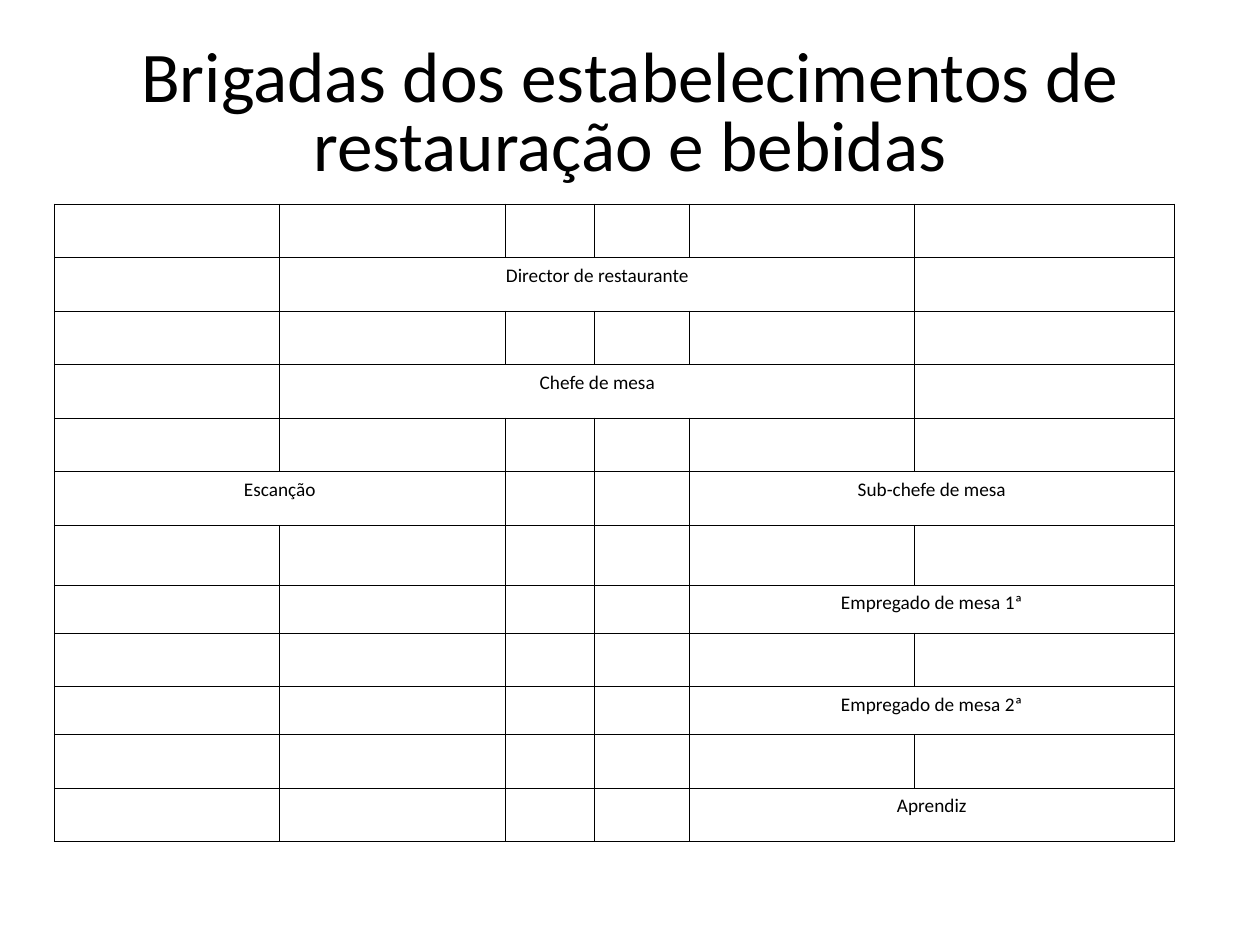
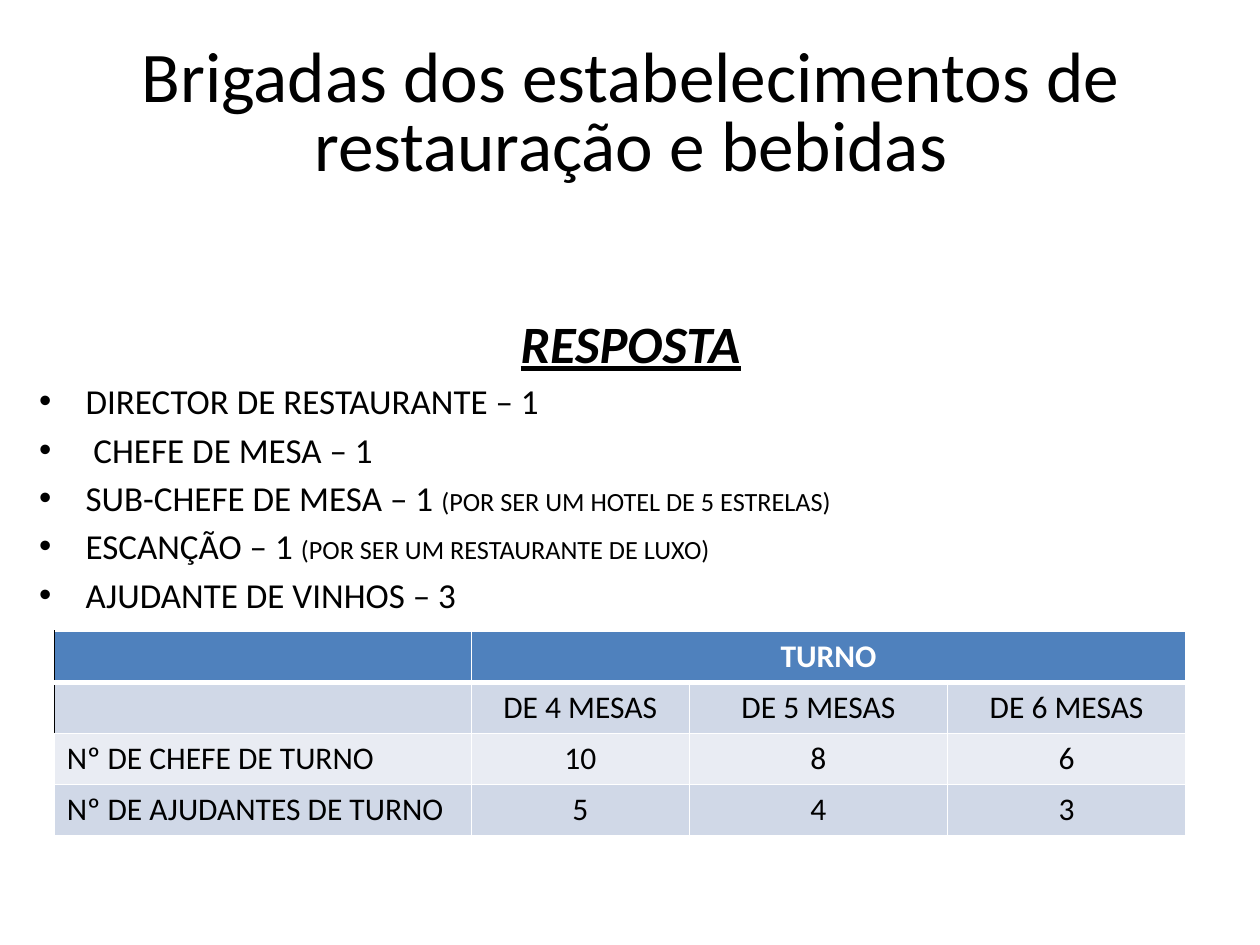
from lxml.etree import SubElement
from pptx import Presentation
from pptx.dml.color import RGBColor
from pptx.enum.text import MSO_ANCHOR, PP_ALIGN
from pptx.oxml.ns import qn
from pptx.util import Pt

BLACK = RGBColor(0x00, 0x00, 0x00)
WHITE = RGBColor(0xFF, 0xFF, 0xFF)
HEADER_BLUE = RGBColor(0x4F, 0x81, 0xBD)
DARK_BAND = RGBColor(0xD0, 0xD8, 0xE7)
LIGHT_BAND = RGBColor(0xE9, 0xEC, 0xF3)
FONT = "Calibri"
TITLE = "Brigadas dos estabelecimentos de restauração e bebidas"

BRIGADE_COLUMNS = [128.9, 128.9, 51.1, 54, 128.9, 148.3]
BRIGADE_ROWS = [30.6] * 6 + [34.2, 27.4, 30.6, 27.4, 30.6, 30.6]
# (row, first column, last column, post)
BRIGADE_POSTS = [
    (1, 1, 4, "Director de restaurante"),
    (3, 1, 4, "Chefe de mesa"),
    (5, 0, 1, "Escanção"),
    (5, 4, 5, "Sub-chefe de mesa"),
    (7, 4, 5, "Empregado de mesa 1ª"),
    (9, 4, 5, "Empregado de mesa 2ª"),
    (11, 4, 5, "Aprendiz"),
]

STAFF = [
    ("DIRECTOR DE RESTAURANTE – 1", ""),
    (" CHEFE DE MESA – 1", ""),
    ("SUB-CHEFE DE MESA – 1 ", "(POR SER UM HOTEL DE 5 ESTRELAS)"),
    ("ESCANÇÃO – 1 ", "(POR SER UM RESTAURANTE DE LUXO)"),
    ("AJUDANTE DE VINHOS – 3", ""),
]

SHIFT_COLUMNS = [238.3, 124.6, 147.6, 136.1]
SHIFT_ROWS = [29.2] * 4
SHIFTS = [
    ["", "TURNO", "", ""],
    ["", "DE 4 MESAS", "DE 5 MESAS", "DE 6 MESAS"],
    ["Nº DE CHEFE DE TURNO", "10", "8", "6"],
    ["Nº DE AJUDANTES DE TURNO", "5", "4", "3"],
]
SHIFT_FILLS = [HEADER_BLUE, DARK_BAND, LIGHT_BAND, DARK_BAND]


def add_span(para, text, size, color=BLACK, bold=False, italic=False, underline=False):
    span = para.add_run()
    span.text = text
    font = span.font
    font.name, font.size, font.color.rgb = FONT, Pt(size), color
    font.bold, font.italic, font.underline = bold, italic, underline


def add_box(page, left, top, width, height):
    box = page.shapes.add_textbox(Pt(left), Pt(top), Pt(width), Pt(height))
    box.text_frame.word_wrap = True
    return box.text_frame


def add_title(page, left, width):
    frame = add_box(page, left, 21.6, width, 90)
    frame.vertical_anchor = MSO_ANCHOR.MIDDLE
    para = frame.paragraphs[0]
    para.alignment = PP_ALIGN.CENTER
    para.line_spacing = 0.8
    add_span(para, TITLE, 40.7)


def set_bullet(para):
    properties = para._p.get_or_add_pPr()
    properties.set("marL", str(Pt(27.4)))
    properties.set("indent", str(-Pt(26.6)))
    color = SubElement(properties, qn("a:buClr"))
    SubElement(color, qn("a:srgbClr"), val=str(BLACK))
    SubElement(properties, qn("a:buFont"), typeface="Arial")
    SubElement(properties, qn("a:buChar"), char="•")


def add_table(page, left, top, columns, rows):
    frame = page.shapes.add_table(len(rows), len(columns), Pt(left), Pt(top),
                                  Pt(sum(columns)), Pt(sum(rows)))
    table = frame.table
    table.first_row = table.horz_banding = False
    for column, width in zip(table.columns, columns):
        column.width = Pt(width)
    for row, height in zip(table.rows, rows):
        row.height = Pt(height)
    return table


def set_borders(cell, **sides):
    """Draw the sides L, R, T and B, each given as (colour, width)."""
    properties = cell._tc.get_or_add_tcPr()
    for side in "LRTB":
        color, width = sides[side]
        line = SubElement(properties, qn(f"a:ln{side}"), w=str(Pt(width)))
        fill = SubElement(line, qn("a:solidFill"))
        SubElement(fill, qn("a:srgbClr"), val=str(color))


def write_cell(cell, text, size, align=PP_ALIGN.CENTER, **style):
    para = cell.text_frame.paragraphs[0]
    para.alignment = align
    add_span(para, text, size, **style)


def add_brigade_table(page):
    table = add_table(page, 31, 116.6, BRIGADE_COLUMNS, BRIGADE_ROWS)
    for cell in table.iter_cells():
        set_borders(cell, **dict.fromkeys("LRTB", (BLACK, 0.5)))
        cell.fill.background()
        cell.margin_top = cell.margin_bottom = 0
    for row, first, last, post in BRIGADE_POSTS:
        cell = table.cell(row, first)
        cell.merge(table.cell(row, last))
        cell.margin_left = cell.margin_right = Pt(0.7)
        cell.margin_top = cell.margin_bottom = Pt(3.6)
        write_cell(cell, post, 11)


def add_answer(page):
    frame = add_box(page, 14.4, 133.9, 691.9, 385.2)
    frame.margin_top = Pt(43.6)
    heading = frame.paragraphs[0]
    heading.alignment = PP_ALIGN.CENTER
    heading.space_before = Pt(6)
    add_span(heading, "RESPOSTA", 30, bold=True, italic=True, underline=True)
    for post, reason in STAFF:
        para = frame.add_paragraph()
        para.alignment = PP_ALIGN.JUSTIFY
        para.space_before = Pt(3.6)
        set_bullet(para)
        add_span(para, post, 20)
        if reason:
            add_span(para, reason, 15)


def add_shift_table(page):
    table = add_table(page, 31, 360.7, SHIFT_COLUMNS, SHIFT_ROWS)
    thin, thick = (WHITE, 0.96), (WHITE, 3)
    for row, (texts, fill) in enumerate(zip(SHIFTS, SHIFT_FILLS)):
        for column, text in enumerate(texts):
            cell = table.cell(row, column)
            set_borders(cell,
                        L=(BLACK, 0.96) if column == 0 and row < 2 else thin,
                        R=thin,
                        T=thick if row == 1 else thin,
                        B=thick if row == 0 else thin)
            cell.fill.solid()
            cell.fill.fore_color.rgb = fill
            if text:
                write_cell(cell, text, 18,
                           align=PP_ALIGN.CENTER if column else PP_ALIGN.LEFT,
                           color=BLACK if row else WHITE, bold=row == 0)
    table.cell(0, 1).merge(table.cell(0, 3))


def main():
    deck = Presentation()
    deck.slide_width, deck.slide_height = Pt(720), Pt(540)
    blank = deck.slide_layouts[6]

    page = deck.slides.add_slide(blank)
    add_title(page, 0, 720)
    add_brigade_table(page)

    page = deck.slides.add_slide(blank)
    add_title(page, 14.4, 691.9)
    add_answer(page)
    add_shift_table(page)

    deck.save("out.pptx")


if __name__ == "__main__":
    main()
